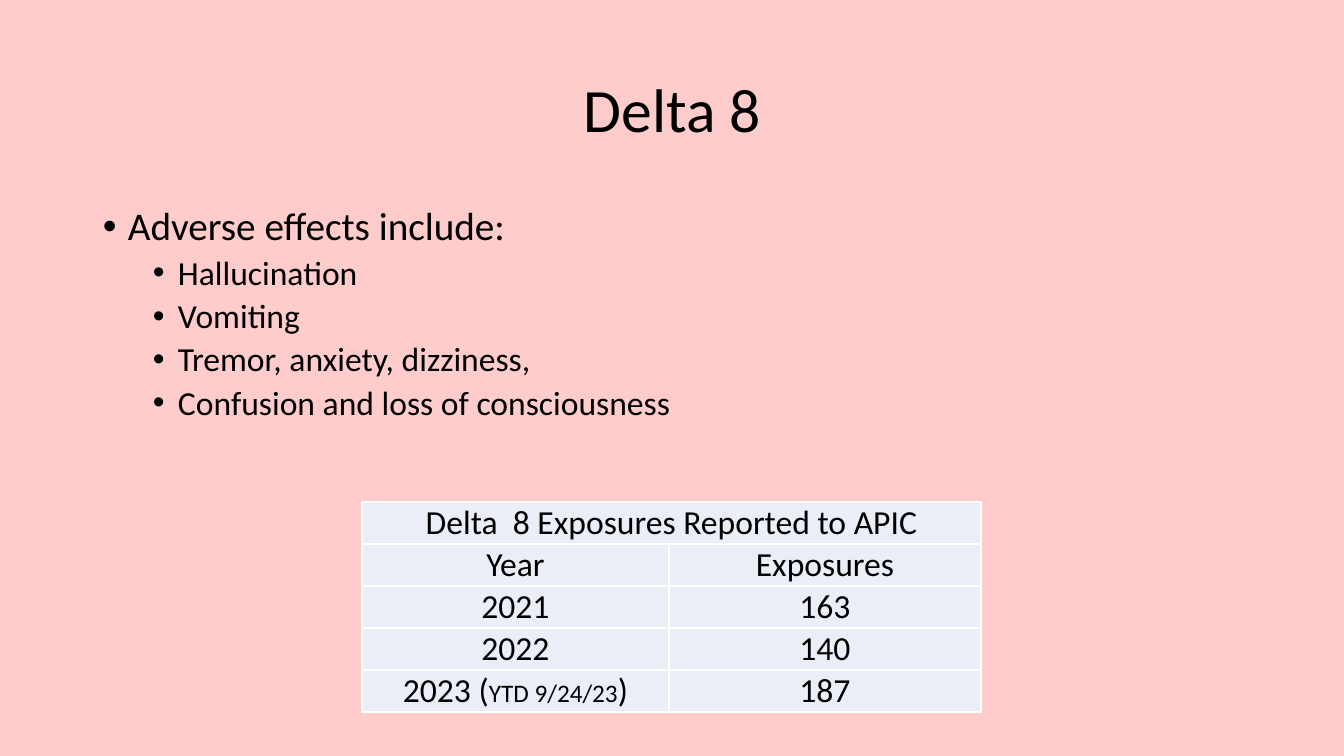
import pptx
import pptx.util
import pptx.dml.color
import pptx.enum.text
import pptx.oxml
import pptx.oxml.ns
import lxml.etree

# Content
TITLE = "Delta 8"
EFFECTS_HEADING = "Adverse effects include:"
EFFECTS = [
    "Hallucination",
    "Vomiting",
    "Tremor, anxiety, dizziness,",
    "Confusion and loss of consciousness",
]
TABLE_TITLE = "Delta  8 Exposures Reported to APIC"
# Each cell is a list of (text, size in points)
EXPOSURES = [
    ([("Year", 24)], [("Exposures", 24)]),
    ([("2021", 24)], [("163", 24)]),
    ([("2022", 24)], [("140", 24)]),
    ([("2023 (", 24), ("YTD 9/24/23", 18), (")", 24)], [("187", 24)]),
]

# Look
FONT = "Calibri"
PINK = pptx.dml.color.RGBColor(0xFF, 0xCC, 0xCC)
BLACK = pptx.dml.color.RGBColor(0, 0, 0)
PALE_BLUE = pptx.dml.color.RGBColor(0xEA, 0xEF, 0xF7)
WHITE = pptx.dml.color.RGBColor(0xFF, 0xFF, 0xFF)
CENTER = pptx.enum.text.PP_ALIGN.CENTER
ANCHOR = pptx.enum.text.MSO_ANCHOR

# Layout in px
SLIDE_SIZE = (1344, 756)
TITLE_BOX = (93, 40, 1159, 146)
BODY_BOX = (93, 202, 1159, 527)
TABLE_LEFT, TABLE_TOP = 362, 502
COLUMN_WIDTHS = (307, 312)
ROW_HEIGHT = 42
BULLET_HANG = 25
LEVEL_STEP = 50


def px(length):
    return pptx.util.Emu(round(length * 914400 / 100.8))


def style_font(font, size):
    font.name = FONT
    font.size = pptx.util.Pt(size)
    font.color.rgb = BLACK


def add_text_frame(slide, box, anchor):
    frame = slide.shapes.add_textbox(*map(px, box)).text_frame
    frame.word_wrap = True
    frame.vertical_anchor = anchor
    return frame


def add_bullet(paragraph, level):
    properties = paragraph._p.get_or_add_pPr()
    properties.set("marL", str(px(BULLET_HANG + LEVEL_STEP * level)))
    properties.set("indent", str(-px(BULLET_HANG)))
    bullet_font = lxml.etree.SubElement(properties, pptx.oxml.ns.qn("a:buFont"))
    bullet_font.set("typeface", "Arial")
    bullet = lxml.etree.SubElement(properties, pptx.oxml.ns.qn("a:buChar"))
    bullet.set("char", "•")


def add_borders(cell):
    properties = cell._tc.get_or_add_tcPr()
    for position, side in enumerate(("lnL", "lnR", "lnT", "lnB")):
        border = pptx.oxml.parse_xml(
            f'<a:{side} {pptx.oxml.ns.nsdecls("a")} w="{pptx.util.Pt(1)}">'
            f'<a:solidFill><a:srgbClr val="{WHITE}"/></a:solidFill></a:{side}>'
        )
        properties.insert(position, border)


def fill_cell(cell, runs):
    cell.fill.solid()
    cell.fill.fore_color.rgb = PALE_BLUE
    add_borders(cell)
    cell.margin_left = cell.margin_right = cell.margin_top = px(1)
    cell.margin_bottom = 0
    cell.vertical_anchor = ANCHOR.BOTTOM
    paragraph = cell.text_frame.paragraphs[0]
    paragraph.alignment = CENTER
    for text, size in runs:
        run = paragraph.add_run()
        run.text = text
        style_font(run.font, size)


def main():
    presentation = pptx.Presentation()
    presentation.slide_width, presentation.slide_height = map(px, SLIDE_SIZE)
    slide = presentation.slides.add_slide(presentation.slide_layouts[6])
    slide.background.fill.solid()
    slide.background.fill.fore_color.rgb = PINK

    # Title
    title = add_text_frame(slide, TITLE_BOX, ANCHOR.MIDDLE).paragraphs[0]
    title.text = TITLE
    title.alignment = CENTER
    title.line_spacing = 0.9
    style_font(title.font, 44)

    # Adverse effects
    body = add_text_frame(slide, BODY_BOX, ANCHOR.TOP)
    heading = body.paragraphs[0]
    heading.text = EFFECTS_HEADING
    heading.line_spacing = 0.9
    add_bullet(heading, 0)
    style_font(heading.font, 28)
    for effect in EFFECTS:
        paragraph = body.add_paragraph()
        paragraph.text = effect
        paragraph.level = 1
        paragraph.line_spacing = 0.9
        paragraph.space_before = pptx.util.Pt(5)
        add_bullet(paragraph, 1)
        style_font(paragraph.font, 24)

    # Exposure table
    row_count = len(EXPOSURES) + 1
    table = slide.shapes.add_table(
        row_count, len(COLUMN_WIDTHS), px(TABLE_LEFT), px(TABLE_TOP),
        px(sum(COLUMN_WIDTHS)), px(ROW_HEIGHT * row_count),
    ).table
    table.first_row = table.horz_banding = False
    for column, width in zip(table.columns, COLUMN_WIDTHS):
        column.width = px(width)
    for row in table.rows:
        row.height = px(ROW_HEIGHT)
    table.cell(0, 0).merge(table.cell(0, 1))
    rows = [([(TABLE_TITLE, 24)], [])] + EXPOSURES
    for row_index, row_cells in enumerate(rows):
        for column_index, runs in enumerate(row_cells):
            fill_cell(table.cell(row_index, column_index), runs)

    presentation.save("out.pptx")


if __name__ == "__main__":
    main()
